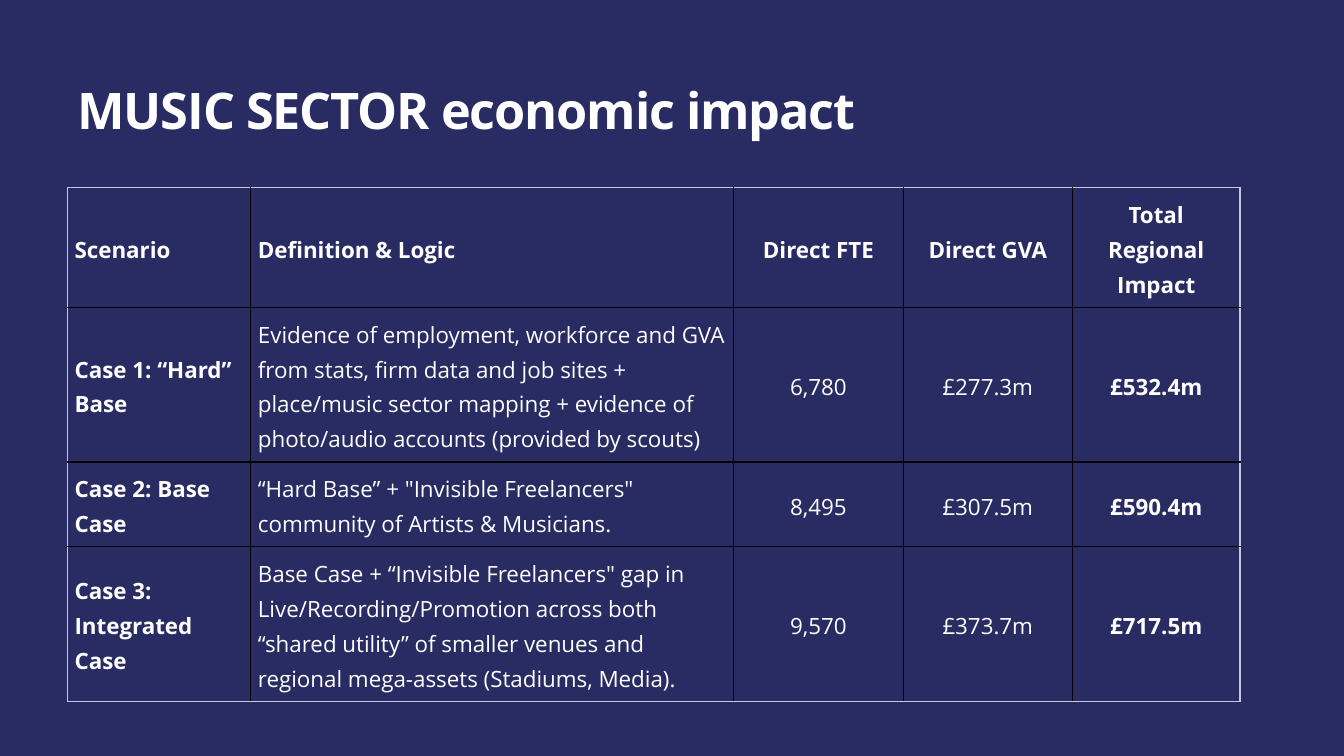
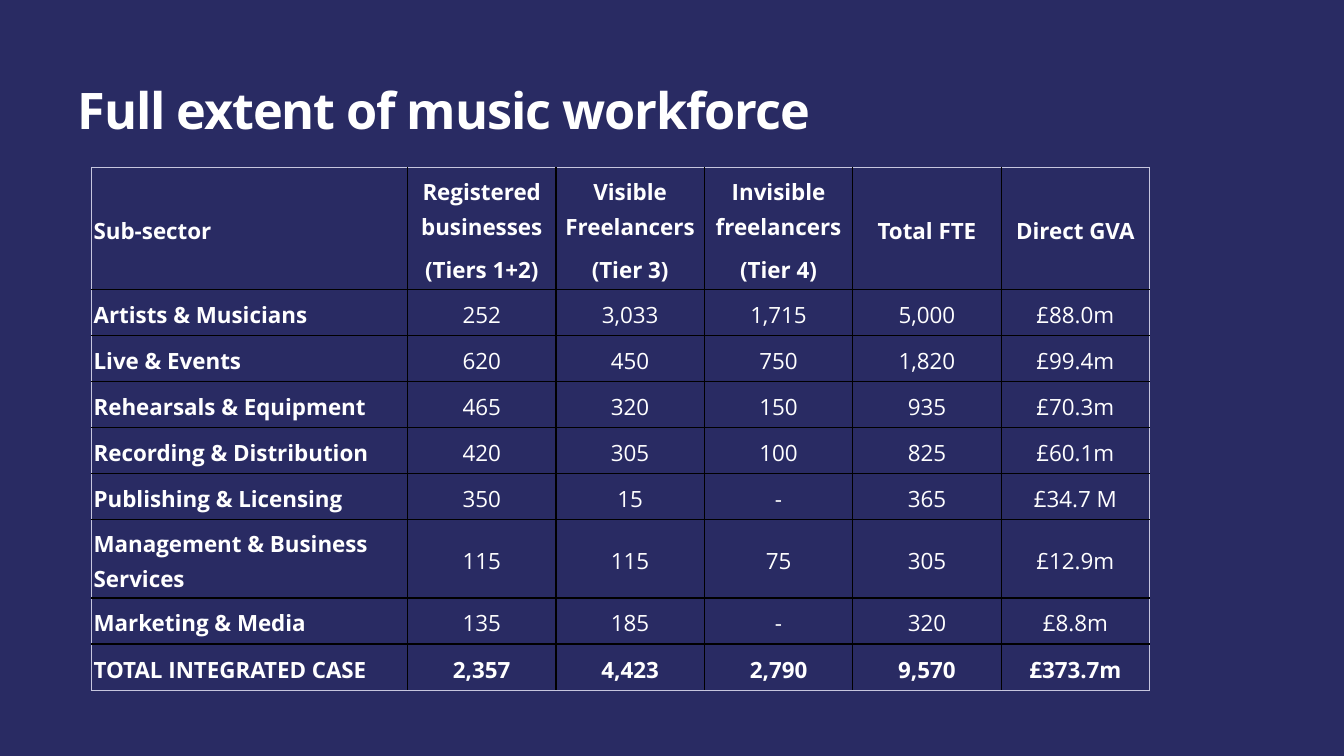
from lxml import etree
from pptx import Presentation
from pptx.dml.color import RGBColor
from pptx.enum import text
from pptx.oxml import ns
from pptx.util import Cm, Pt

# Shared look
BACK = RGBColor(0x29, 0x2B, 0x63)
INK = RGBColor(0xFF, 0xFF, 0xFF)
RULE = RGBColor(0x00, 0x00, 0x00)
EDGE = RGBColor(0xC6, 0xC6, 0xDE)
FONT = "Open Sans"

# Content; lengths in centimetres
SLIDES = [
    {
        "title": "MUSIC SECTOR economic impact",
        "at": (1.7, 4.72),
        "cols": [4.62, 12.17, 4.27, 4.27, 4.22],
        "rows": [3.02, 3.9, 2.13, 3.9],
        "pad": (0.18, 0.18),
        "left": 2,
        "bold": lambda row, col: row == 0 or col in (0, 4),
        "cells": [
            ("Scenario", "Definition & Logic", "Direct FTE", "Direct GVA",
             "Total Regional Impact"),
            ("Case 1: “Hard” Base",
             "Evidence of employment, workforce and GVA from stats, firm data "
             "and job sites + place/music sector mapping + evidence of "
             "photo/audio accounts (provided by scouts)",
             "6,780", "£277.3m", "£532.4m"),
            ("Case 2: Base Case",
             "“Hard Base” + \"Invisible Freelancers\" community of "
             "Artists & Musicians.",
             "8,495", "£307.5m", "£590.4m"),
            ("Case 3: Integrated Case",
             "Base Case + “Invisible Freelancers\" gap in "
             "Live/Recording/Promotion across both “shared utility” of "
             "smaller venues and regional mega-assets (Stadiums, Media).",
             "9,570", "£373.7m", "£717.5m"),
        ],
    },
    {
        "title": "Full extent of music workforce",
        "at": (2.31, 4.22),
        "cols": [7.96] + [3.74] * 5,
        "rows": [3.07] + [1.16] * 5 + [1.98] + [1.16] * 2,
        "pad": (0.05, 0.1),
        "left": 1,
        "bold": lambda row, col: row in (0, 8) or col == 0,
        "cells": [
            ("Sub-sector", "Registered businesses\n(Tiers 1+2)",
             "Visible Freelancers\n(Tier 3)",
             "Invisible freelancers\n(Tier 4)", "Total FTE", "Direct GVA"),
            ("Artists & Musicians", "252", "3,033", "1,715", "5,000", "£88.0m"),
            ("Live & Events", "620", "450", "750", "1,820", "£99.4m"),
            ("Rehearsals & Equipment", "465", "320", "150", "935", "£70.3m"),
            ("Recording & Distribution", "420", "305", "100", "825", "£60.1m"),
            ("Publishing & Licensing", "350", "15", "-", "365", "£34.7 M"),
            ("Management & Business Services", "115", "115", "75", "305",
             "£12.9m"),
            ("Marketing & Media", "135", "185", "-", "320", "£8.8m"),
            ("TOTAL INTEGRATED CASE", "2,357", "4,423", "2,790", "9,570",
             "£373.7m"),
        ],
    },
]


def style(para, size, bold, align, space):
    para.alignment = align
    para.line_spacing = space
    for run in para.runs:
        font = run.font
        font.name, font.size, font.bold = FONT, Pt(size), bold
        font.color.rgb = INK


def border(cell, side, color):
    props = cell._tc.get_or_add_tcPr()
    line = etree.SubElement(props, ns.qn("a:ln" + side), w=str(Pt(1)))
    fill = etree.SubElement(line, ns.qn("a:solidFill"))
    etree.SubElement(fill, ns.qn("a:srgbClr"), val=str(color))


def add_title(slide, words):
    frame = slide.shapes.title.text_frame
    frame.text = words
    frame.auto_size = text.MSO_AUTO_SIZE.NONE
    frame.vertical_anchor = text.MSO_ANCHOR.TOP
    frame.margin_top = frame.margin_bottom = 0
    para = frame.paragraphs[0]
    style(para, 36, True, text.PP_ALIGN.LEFT, 1.2)
    para.runs[0]._r.get_or_add_rPr().set("spc", "-80")


def fill_cell(cell, words, pad, bold, align):
    cell.text = words
    cell.vertical_anchor = text.MSO_ANCHOR.MIDDLE
    cell.margin_left = cell.margin_right = Cm(pad[0])
    cell.margin_top = cell.margin_bottom = Cm(pad[1])
    for para in cell.text_frame.paragraphs:
        style(para, 16, bold, align, 1.15)
        para.space_after = Pt(6)


def add_grid(slide, data):
    cols, rows = data["cols"], data["rows"]
    x, y = data["at"]
    table = slide.shapes.add_table(
        len(rows), len(cols), Cm(x), Cm(y), Cm(sum(cols)), Cm(sum(rows))).table
    table.first_row = table.horz_banding = False
    for col, width in zip(table.columns, cols):
        col.width = Cm(width)
    for row, height in zip(table.rows, rows):
        row.height = Cm(height)

    for r, line in enumerate(data["cells"]):
        for c, words in enumerate(line):
            cell = table.cell(r, c)
            align = (text.PP_ALIGN.LEFT if c < data["left"]
                     else text.PP_ALIGN.CENTER)
            fill_cell(cell, words, data["pad"], data["bold"](r, c), align)
            # Light frame outside, dark rules inside
            outer = {"L": c == 0, "R": c == len(cols) - 1,
                     "T": r == 0, "B": r == len(rows) - 1}
            for side, edge in outer.items():
                border(cell, side, EDGE if edge else RULE)
            cell.fill.background()


def main():
    deck = Presentation()
    deck.slide_width, deck.slide_height = Cm(33.87), Cm(19.05)

    # Shared background and title place
    back = deck.slide_master.background.fill
    back.solid()
    back.fore_color.rgb = BACK
    layout = deck.slide_layouts[5]
    head = layout.placeholders[0]
    head.left, head.top = Cm(1.7), Cm(1.7)
    head.width, head.height = Cm(30.48), Cm(2.08)

    for data in SLIDES:
        slide = deck.slides.add_slide(layout)
        add_title(slide, data["title"])
        add_grid(slide, data)
    deck.save("out.pptx")


if __name__ == "__main__":
    main()
